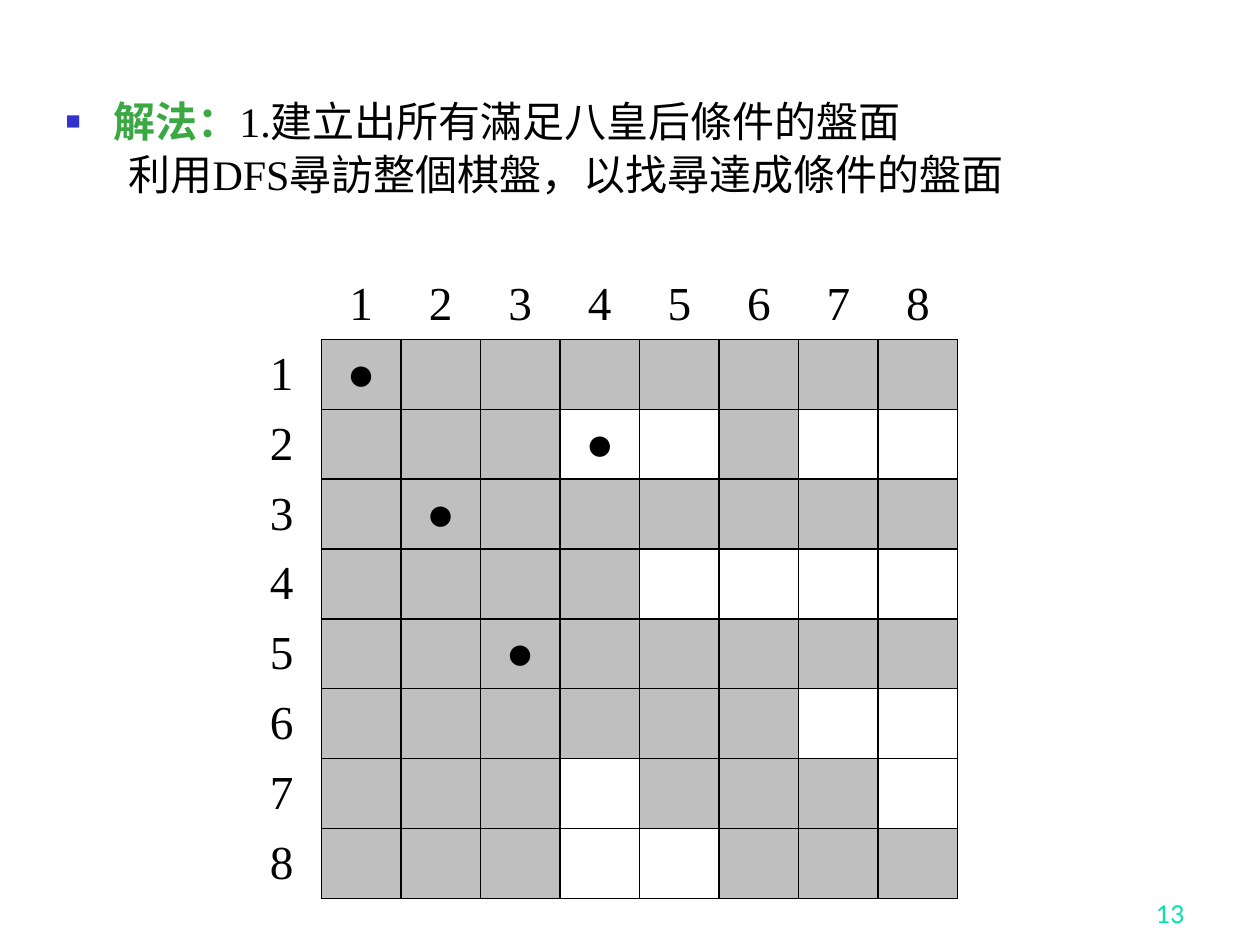
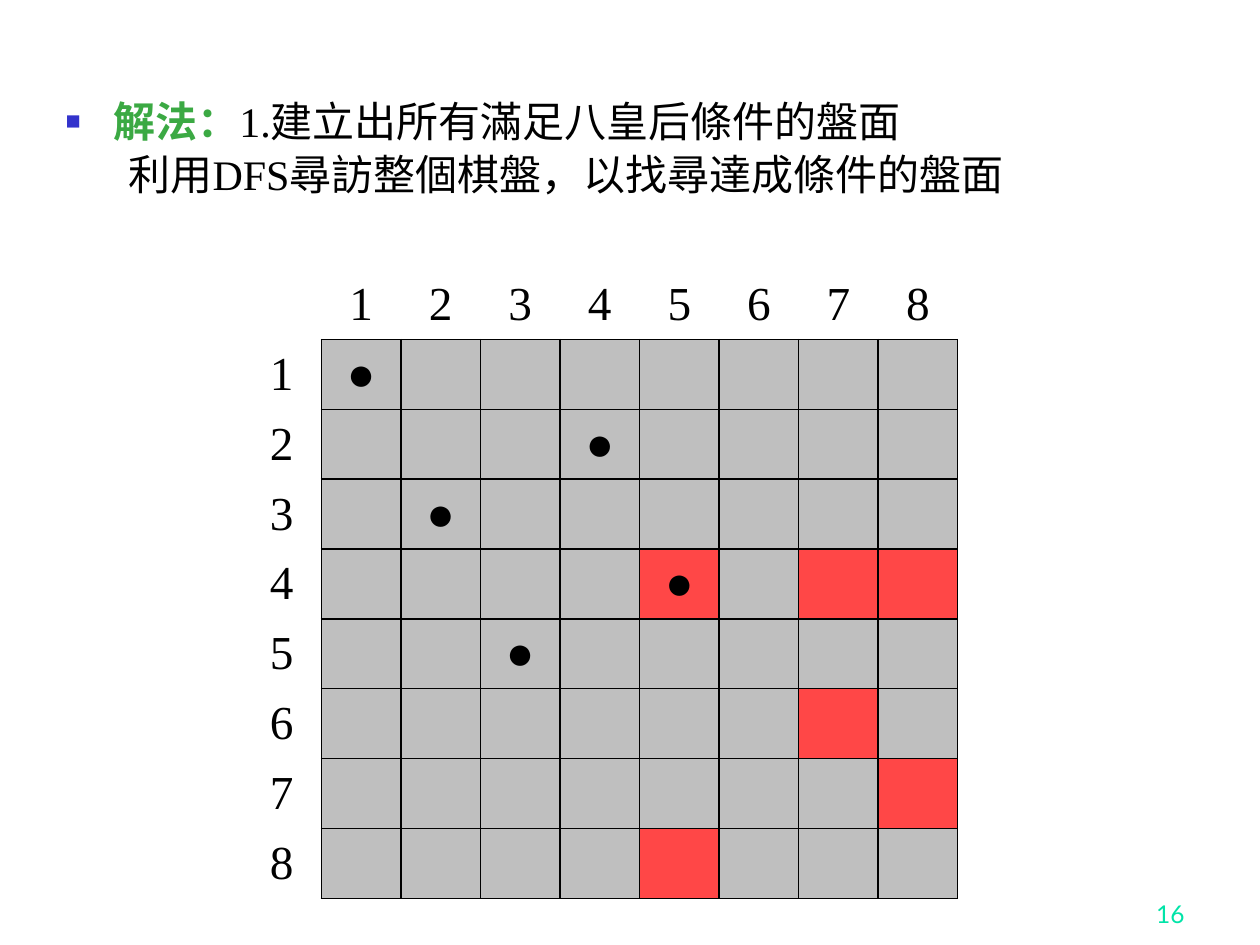
import pptx
import pptx.dml.color
import pptx.enum.text
import pptx.oxml
import pptx.oxml.ns
import pptx.util

# Content: queens are (row, column) squares
HEADING = "解法："
STEP = "1.建立出所有滿足八皇后條件的盤面"
DETAIL = "\t利用DFS尋訪整個棋盤，以找尋達成條件的盤面"
QUEEN = "●"
SIZE = 8

BOARDS = [
    {"page": "13", "placed": [(1, 1), (3, 2), (5, 3)], "next": (2, 4), "free": "FFFFFF"},
    {"page": "16", "placed": [(1, 1), (3, 2), (5, 3), (2, 4)], "next": (4, 5), "free": "FF4747"},
]

# Shared look
PAPER, INK, ATTACKED = "FFFFFF", "000000", "BFBFBF"
GREEN, BULLET, PAGE = "3BA943", "3333CC", "00E4A8"
SERIF, SANS = "Times New Roman", "Lato"
SLIDE_W, SLIDE_H = 10, 7.5
SOLUTION_BOX = (0.42, 0.75, 8.83, 0.72)
PAGE_BOX = (7.42, 6.92, 2.08, 0.5)
BOARD_BOX = (1.92, 2.14, 5.68, 4.99)
CENTER = pptx.enum.text.PP_ALIGN.CENTER
RIGHT = pptx.enum.text.PP_ALIGN.RIGHT
MIDDLE = pptx.enum.text.MSO_ANCHOR.MIDDLE

inch = pptx.util.Inches


def color(hex_text):
    return pptx.dml.color.RGBColor.from_string(hex_text)


def xml(tag, inner="", **attributes):
    listed = "".join(f' {key}="{value}"' for key, value in attributes.items())
    return pptx.oxml.parse_xml(
        f'<a:{tag} {pptx.oxml.ns.nsdecls("a")}{listed}>{inner}</a:{tag}>')


def write(paragraph, text, size, ink, face=SERIF, bold=False):
    run = paragraph.add_run()
    run.text = text
    look = {"size": pptx.util.Pt(size), "name": face, "bold": bold}
    for key, value in look.items():
        setattr(run.font, key, value)
    run.font.color.rgb = color(ink)


def add_solution(slide):
    """Bulleted step with its tabbed second line."""
    solution = slide.placeholders[1]
    for key, value in zip(("left", "top", "width", "height"), SOLUTION_BOX):
        setattr(solution, key, inch(value))
    frame = solution.text_frame
    frame.auto_size = pptx.enum.text.MSO_AUTO_SIZE.NONE
    step, detail = frame.paragraphs[0], frame.add_paragraph()
    for paragraph, hang in ((step, inch(0.38)), (detail, 0)):
        paragraph.line_spacing = 0.9
        paragraph.space_before = pptx.util.Pt(4.8)
        properties = paragraph._p.get_or_add_pPr()
        properties.set("marL", str(hang))
        properties.set("indent", str(-hang))
    bullet = step._p.pPr
    bullet.append(xml("buClr", f'<a:srgbClr val="{BULLET}"/>'))
    bullet.append(xml("buSzPct", val=60000))
    bullet.append(xml("buChar", char="■"))
    detail._p.pPr.append(xml("buNone"))
    detail._p.pPr.append(xml("tabLst", f'<a:tab pos="{inch(1)}" algn="l"/>'))
    write(step, HEADING, 24, GREEN, bold=True)
    write(step, STEP, 24, INK)
    write(detail, DETAIL, 24, INK)


def add_page_number(slide, number):
    frame = slide.shapes.add_textbox(*map(inch, PAGE_BOX)).text_frame
    frame.word_wrap = True
    frame.vertical_anchor = pptx.enum.text.MSO_ANCHOR.BOTTOM
    frame.paragraphs[0].alignment = RIGHT
    write(frame.paragraphs[0], number, 14, PAGE, SANS)


def attacks(queen, square):
    down, across = square[0] - queen[0], square[1] - queen[1]
    return down == 0 or across == 0 or abs(down) == abs(across)


def set_borders(cell, drawn):
    properties = cell._tc.get_or_add_tcPr()
    for place, side in enumerate("LRTB"):
        if side in drawn:
            line = f'<a:solidFill><a:srgbClr val="{INK}"/></a:solidFill>'
        else:
            line = "<a:noFill/>"
        properties.insert(place, xml("ln" + side, line, w=pptx.util.Pt(1)))


def add_board(slide, board):
    """Row and column numbers around squares shaded where a placed queen attacks."""
    lines = SIZE + 1
    table = slide.shapes.add_table(lines, lines, *map(inch, BOARD_BOX)).table
    table.first_row = table.horz_banding = False
    for column in table.columns:
        column.width = inch(BOARD_BOX[2] / lines)
    for row in table.rows:
        row.height = inch(BOARD_BOX[3] / lines)
    queens = board["placed"] + [board["next"]]
    for row in range(lines):
        for column in range(lines):
            square = (row, column)
            if row and column:
                hit = any(attacks(queen, square) for queen in board["placed"])
                fill = ATTACKED if hit else board["free"]
                text, borders = QUEEN if square in queens else "", "LRTB"
            else:
                fill, text = PAPER, str(row or column or "")
                borders = "R" if row else "B" if column else ""
            cell = table.cell(row, column)
            cell.fill.solid()
            cell.fill.fore_color.rgb = color(fill)
            set_borders(cell, borders)
            cell.vertical_anchor = MIDDLE
            cell.margin_top = cell.margin_bottom = inch(0.02)
            if text:
                cell.text_frame.paragraphs[0].alignment = CENTER
                write(cell.text_frame.paragraphs[0], text, 27, INK)


def main():
    deck = pptx.Presentation()
    deck.slide_width, deck.slide_height = inch(SLIDE_W), inch(SLIDE_H)
    for board in BOARDS:
        slide = deck.slides.add_slide(deck.slide_layouts[1])
        heading = slide.shapes.title._element
        heading.getparent().remove(heading)
        add_page_number(slide, board["page"])
        add_solution(slide)
        add_board(slide, board)
    deck.save("out.pptx")


if __name__ == "__main__":
    main()
